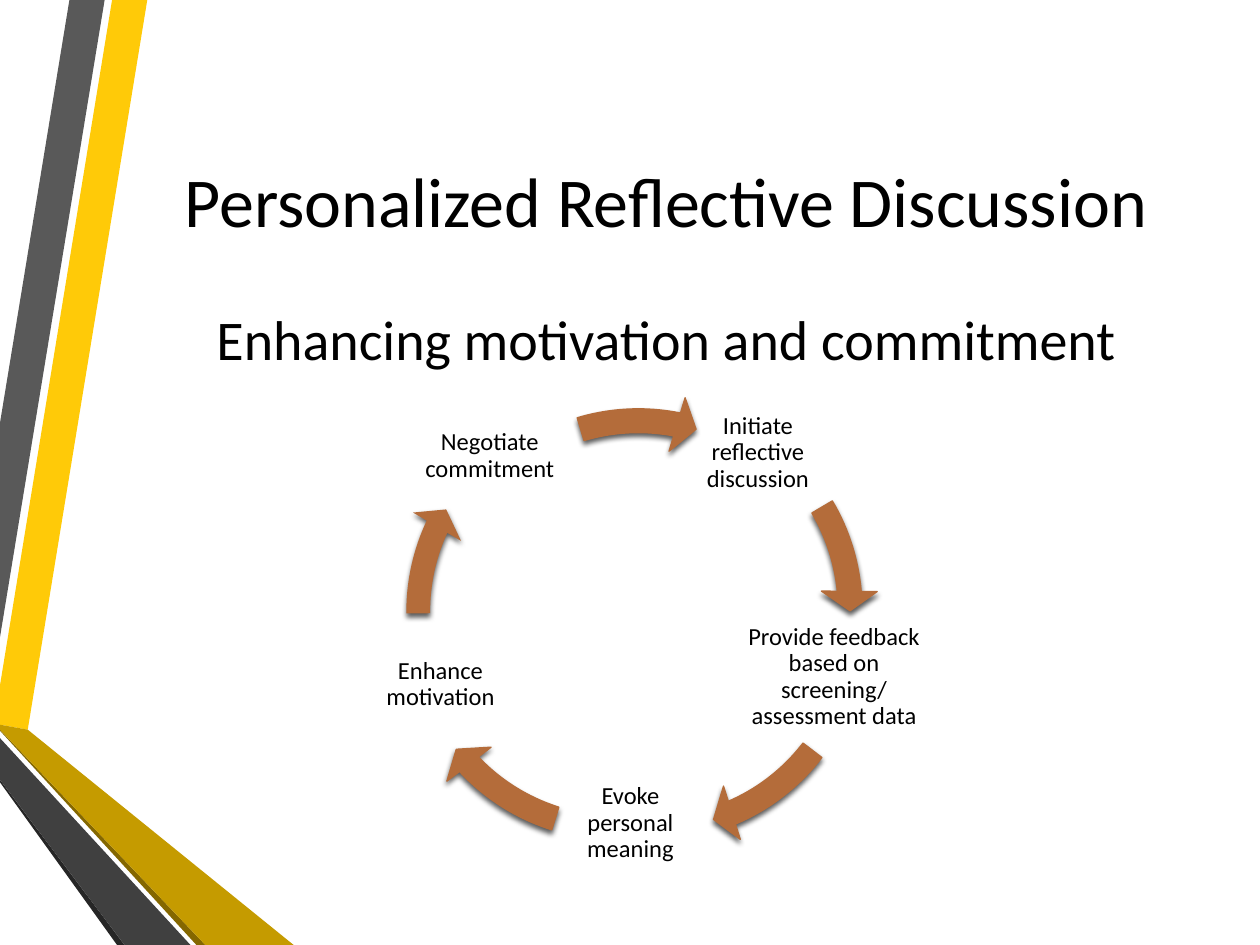
from dataclasses import dataclass

from lxml.etree import SubElement
from pptx import Presentation
from pptx.dml.color import RGBColor
from pptx.enum.shapes import MSO_SHAPE
from pptx.enum.text import MSO_ANCHOR, PP_ALIGN
from pptx.oxml.ns import qn
from pptx.util import Cm, Pt

COLORS = {
    "gold": "FFCA08", "gray": "595959", "black": "262626", "olive": "846700",
    "ochre": "C59B00", "slate": "404040", "rust": "B46C3A", "text": "000000",
}
FONT = "Calibri"
RING = 9.22  # diameter of every arrow's circle, in cm


@dataclass
class Band:
    color: str
    points: list  # hundredths of a centimetre


@dataclass
class Arrow:
    left: float
    top: float
    head: float  # angles in units of 100000 / 60000 degrees
    tail: float
    edge: bool = True


@dataclass
class Label:
    text: str
    left: float
    top: float
    width: float = 2.46
    height: float = 2.46
    after: int = 5


BANDS = [
    Band("gold", [(0, 1382), (0, 1461), (56, 1471), (297, 0), (226, 0)]),
    Band("gray", [(211, 0), (140, 0), (0, 853), (0, 1285)]),
    Band("black", [(0, 1572), (0, 1577), (236, 1905), (251, 1905)]),
    Band("olive", [(0, 1471), (0, 1473), (396, 1905), (414, 1905)]),
    Band("ochre", [(0, 1471), (414, 1905), (592, 1905), (56, 1471), (0, 1461)]),
    Band("slate", [(0, 1572), (251, 1905), (384, 1905), (0, 1488)]),
]
ARROWS = [
    Arrow(8.26, 7.92, 168.67, 151.97),
    Arrow(7.8, 8.03, 82.13, 64.48),
    Arrow(7.87, 7.72, 123, 107.7, edge=False),
    Arrow(8.56, 8.05, 40.16, 22.52),
    Arrow(8.48, 7.67, 212.95, 197.65),
]
LABELS = [
    Label("Negotiate commitment", 8.48, 8.66, 2.79, 1.07),
    Label("Initiate reflective discussion", 14.05, 7.9),
    Label("Provide feedback\nbased on screening/\nassessment data",
          14.91, 12.42, width=3.81, after=0),
    Label("Evoke personal meaning", 11.48, 15.37),
    Label("Enhance motivation", 7.65, 12.57),
]


def rgb(name: str) -> RGBColor:
    return RGBColor.from_string(COLORS[name])


def paint(shape, color: str) -> None:
    shape.shadow.inherit = False
    shape.fill.solid()
    shape.fill.fore_color.rgb = rgb(color)
    shape.line.fill.background()


def write(shape, text: str, size: int) -> None:
    """Set centred text in the middle of the shape."""
    frame = shape.text_frame
    frame.word_wrap = True
    frame.vertical_anchor = MSO_ANCHOR.MIDDLE
    frame.text = text
    for para in frame.paragraphs:
        para.alignment = PP_ALIGN.CENTER
        for run in para.runs:
            run.font.size = Pt(size)
            run.font.name = FONT
            run.font.color.rgb = rgb("text")


def place(shape, left: float, top: float, width: float, height: float) -> None:
    shape.left, shape.top = Cm(left), Cm(top)
    shape.width, shape.height = Cm(width), Cm(height)


def draw_band(shapes, band: Band) -> None:
    first, *rest = band.points
    outline = shapes.build_freeform(*first, scale=Cm(0.01))
    outline.add_line_segments(rest, close=True)
    paint(outline.convert_to_shape(), band.color)


def add_shadow(shape) -> None:
    effects = shape._element.spPr.find(qn("a:effectLst"))
    outer = SubElement(effects, qn("a:outerShdw"), blurRad=str(Pt(3)),
                       dist=str(Pt(2)), dir="5400000", rotWithShape="0")
    tint = SubElement(outer, qn("a:srgbClr"), val=COLORS["text"])
    SubElement(tint, qn("a:alpha"), val="64000")


def draw_arrow(shapes, arrow: Arrow) -> None:
    shape = shapes.add_shape(MSO_SHAPE.CIRCULAR_ARROW, Cm(arrow.left),
                             Cm(arrow.top), Cm(RING), Cm(RING))
    for i, value in enumerate((0.052, 3.355, arrow.head, arrow.tail, 0.061)):
        shape.adjustments[i] = value
    paint(shape, "rust")
    if arrow.edge:
        shape.line.color.rgb = rgb("rust")
        shape.line.width = Pt(0.75)
    add_shadow(shape)


def draw_label(shapes, label: Label) -> None:
    box = shapes.add_textbox(Cm(label.left), Cm(label.top),
                             Cm(label.width), Cm(label.height))
    write(box, label.text, 14)
    frame = box.text_frame
    frame.margin_left = frame.margin_right = Cm(0.05)
    frame.margin_top = frame.margin_bottom = Cm(0.05)
    for para in frame.paragraphs:
        para.line_spacing = 0.9
        para.space_after = Pt(label.after)


def fill_heads(slide) -> None:
    """Fill the title and the subtitle line."""
    title, body = slide.placeholders
    place(title, 2.72, 1.27, 21.41, 5.51)
    write(title, "Personalized Reflective Discussion", 40)
    place(body, 1.47, 6.02, 23.93, 1.6)
    write(body, "Enhancing motivation and commitment", 32)
    para = body.text_frame.paragraphs[0]
    para.space_before, para.space_after = Pt(0), Pt(4.5)
    props = para._p.get_or_add_pPr()
    props.set("marL", "0")
    props.set("indent", "0")
    SubElement(props, qn("a:buNone"))


def main() -> None:
    deck = Presentation()
    deck.slide_width, deck.slide_height = Cm(25.4), Cm(19.05)
    slide = deck.slides.add_slide(deck.slide_layouts[1])
    for band in BANDS:
        draw_band(slide.shapes, band)
    fill_heads(slide)
    for arrow in ARROWS:
        draw_arrow(slide.shapes, arrow)
    for label in LABELS:
        draw_label(slide.shapes, label)
    deck.save("out.pptx")


if __name__ == "__main__":
    main()
